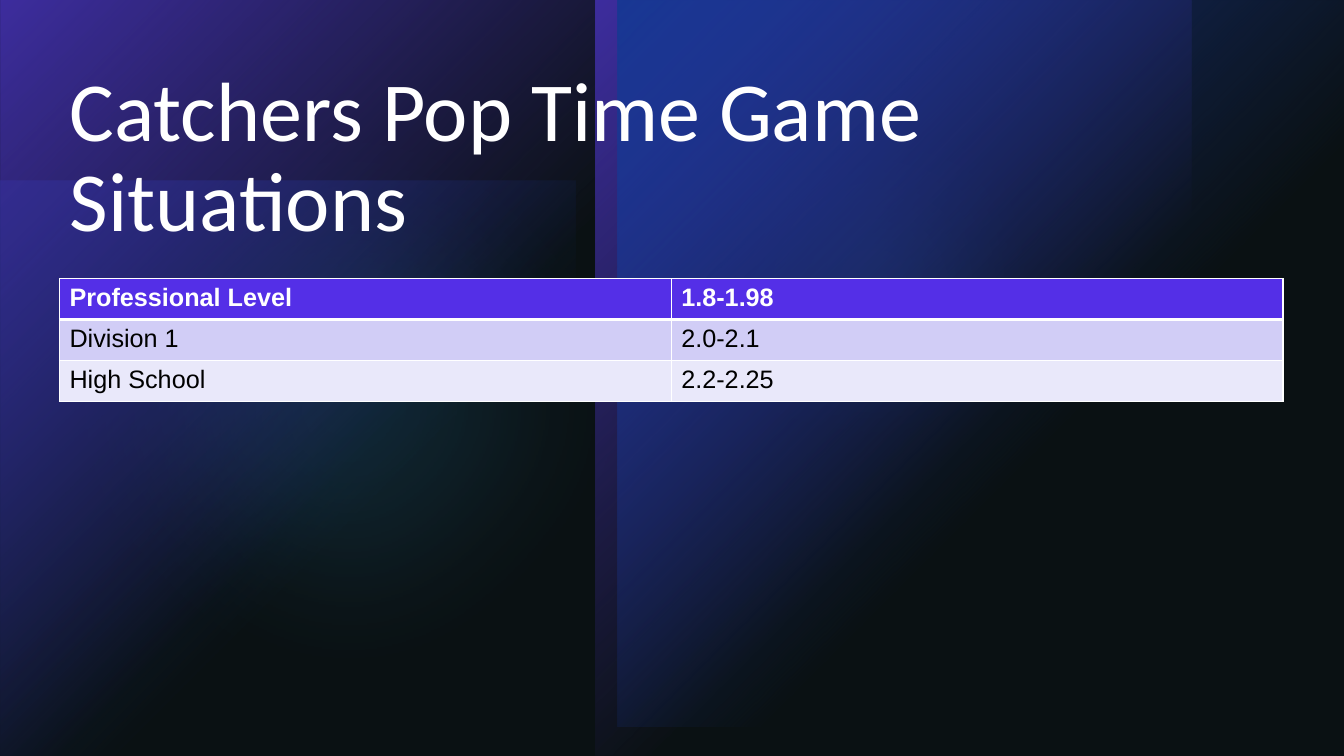
from lxml.etree import SubElement
from pptx import Presentation
from pptx.dml.color import RGBColor
from pptx.enum.shapes import MSO_SHAPE
from pptx.enum.text import MSO_ANCHOR, MSO_AUTO_SIZE, PP_ALIGN
from pptx.oxml import parse_xml
from pptx.oxml.ns import nsdecls, qn
from pptx.util import Pt

BLACK = RGBColor(0, 0, 0)
WHITE = RGBColor(255, 255, 255)
PURPLE = RGBColor(0x54, 0x2F, 0xE7)
BLUE = RGBColor(0x17, 0x40, 0xD5)
SKY = RGBColor(0x29, 0xA1, 0xE7)
VEIL = RGBColor(0x1B, 0x2B, 0x30)
LAVENDER = RGBColor(0xD1, 0xCD, 0xF6)
PALE = RGBColor(0xE9, 0xE8, 0xFA)

TITLE = "Catchers Pop Time Game Situations"
POP_TIMES = [
    ("Professional Level", "1.8-1.98"),
    ("Division 1", "2.0-2.1"),
    ("High School", "2.2-2.25"),
]

WIDTH, HEIGHT = 960, 540
MARGIN, TABLE_TOP, ROW_HEIGHT = 42.5, 199.1, 29.2
CONTENT_WIDTH = 874
SOFT_EDGE = 100
RECT, OVAL = MSO_SHAPE.RECTANGLE, MSO_SHAPE.OVAL

# shape, (left, top, width, height), colour, opacity %, fades out, rotation, flips
BACKDROP = [
    (RECT, (0, 129.3, 411, 411), BLUE, 60, True, 0, ["flipV"]),
    (OVAL, (453, 31, 340, 340), SKY, 60, False, 0, ["flipV"]),
    (OVAL, (0, 40.3, 499.7, 499.7), SKY, 20, False, 0, ["flipV"]),
    (RECT, (0, 0, 425.5, HEIGHT), PURPLE, 100, True, 180, ["flipV"]),
    (RECT, (425.5, 0, 425.5, HEIGHT), PURPLE, 100, True, 180, ["flipH", "flipV"]),
    (RECT, (441, 0, 519, 519), BLUE, 100, True, 180, ["flipV"]),
    (RECT, (0, 0, WIDTH, HEIGHT), VEIL, 40, False, 0, []),
]


def fade_fill(color, opacity):
    """Radial gradient from a corner to full transparency."""
    stops = "".join(
        f'<a:gs pos="{pos}"><a:srgbClr val="{color}"><a:alpha val="{alpha}"/></a:srgbClr></a:gs>'
        for pos, alpha in [(0, opacity * 1000), (60000, 0)])
    return parse_xml(
        f'<a:gradFill {nsdecls("a")} rotWithShape="1"><a:gsLst>{stops}</a:gsLst>'
        '<a:path path="circle"><a:fillToRect r="100000" b="100000"/></a:path></a:gradFill>')


def add_backdrop(s, kind, box, color, opacity, fades, rotation, flips):
    sp = s.shapes.add_shape(kind, *map(Pt, box))
    sp.shadow.inherit = False
    sp.line.fill.background()
    sp.rotation = rotation
    sp.fill.solid()
    sp.fill.fore_color.rgb = color
    props = sp._element.spPr
    for flip in flips:
        props.find(qn("a:xfrm")).set(flip, "1")
    solid = props.find(qn("a:solidFill"))
    if fades:
        props.replace(solid, fade_fill(color, opacity))
    else:
        SubElement(solid[0], qn("a:alpha")).set("val", str(opacity * 1000))
    if kind == OVAL:
        effects = props.find(qn("a:effectLst"))
        SubElement(effects, qn("a:softEdge")).set("rad", str(Pt(SOFT_EDGE)))


def set_font(r, **values):
    color = values.pop("color")
    for name, value in values.items():
        setattr(r.font, name, value)
    r.font.color.rgb = color


def set_borders(cell, widths):
    props = cell._tc.get_or_add_tcPr()
    for i, (side, width) in enumerate(widths.items()):
        props.insert(i, parse_xml(
            f'<a:{side} {nsdecls("a")} w="{Pt(width)}"><a:solidFill>'
            f'<a:srgbClr val="{WHITE}"/></a:solidFill></a:{side}>'))


def add_title(s):
    title = s.shapes.title
    s.shapes._spTree.append(title._element)
    box = {"left": MARGIN, "top": MARGIN, "width": CONTENT_WIDTH, "height": 142.5}
    for name, value in box.items():
        setattr(title, name, Pt(value))
    tf = title.text_frame
    tf.word_wrap = True
    tf.auto_size = MSO_AUTO_SIZE.NONE
    tf.vertical_anchor = MSO_ANCHOR.MIDDLE
    p = tf.paragraphs[0]
    p.alignment = PP_ALIGN.LEFT
    p.line_spacing = 0.9
    r = p.add_run()
    r.text = TITLE
    set_font(r, name="Calibri", size=Pt(60), color=WHITE)


def add_pop_times(s):
    rows, cols = len(POP_TIMES), len(POP_TIMES[0])
    table = s.shapes.add_table(rows, cols, Pt(MARGIN), Pt(TABLE_TOP),
                               Pt(CONTENT_WIDTH), Pt(ROW_HEIGHT * rows)).table
    for i, values in enumerate(POP_TIMES):
        header = i == 0
        for j, value in enumerate(values):
            cell = table.cell(i, j)
            cell.fill.solid()
            cell.fill.fore_color.rgb = PURPLE if header else (PALE, LAVENDER)[i % 2]
            r = cell.text_frame.paragraphs[0].add_run()
            r.text = value
            set_font(r, name="Arial", size=Pt(18), bold=header,
                     color=WHITE if header else BLACK)
            set_borders(cell, {"lnL": 1, "lnR": 1, "lnT": 3 if i == 1 else 1,
                               "lnB": 3 if header else 1})


def main():
    prs = Presentation()
    prs.slide_width, prs.slide_height = Pt(WIDTH), Pt(HEIGHT)
    s = prs.slides.add_slide(prs.slide_layouts[5])
    s.background.fill.solid()
    s.background.fill.fore_color.rgb = BLACK
    for part in BACKDROP:
        add_backdrop(s, *part)
    add_title(s)
    add_pop_times(s)
    prs.save("out.pptx")


if __name__ == "__main__":
    main()
